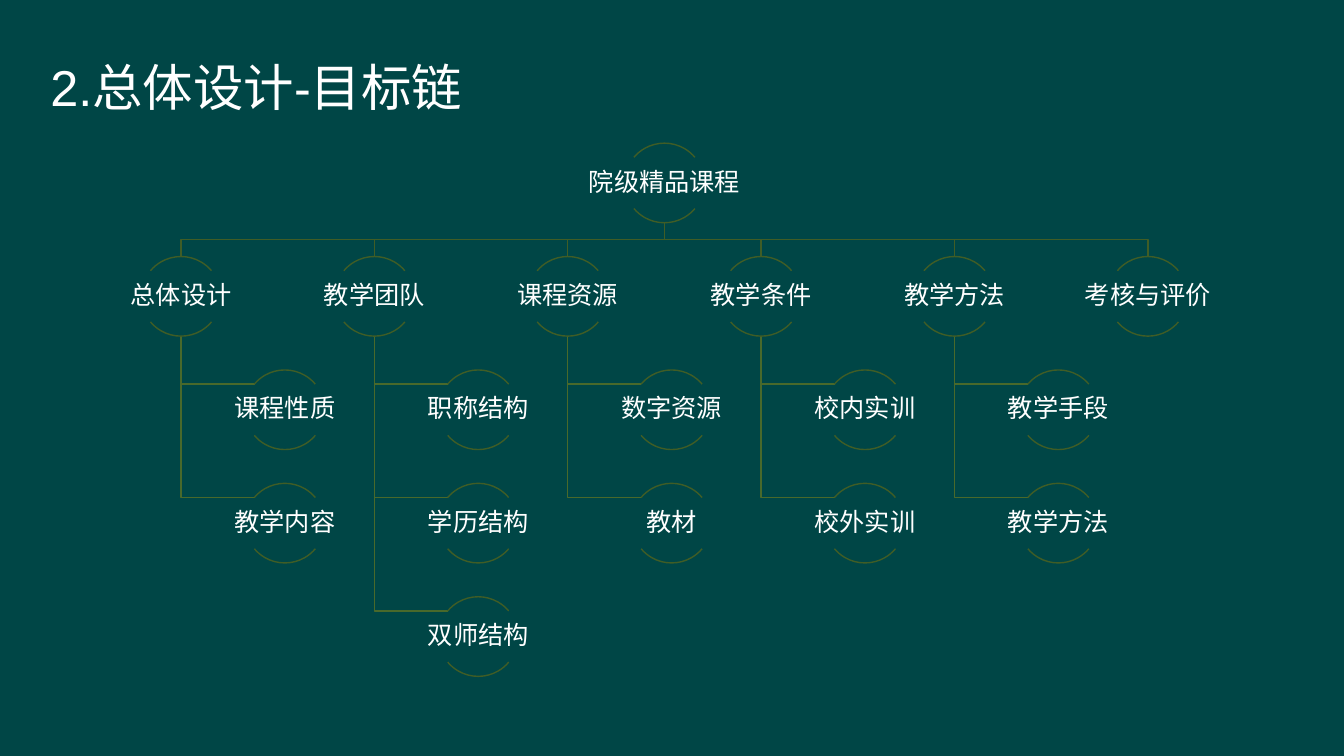
from pptx import Presentation
from pptx.dml.color import RGBColor
from pptx.enum.shapes import MSO_SHAPE
from pptx.enum.text import MSO_ANCHOR, PP_ALIGN
from pptx.util import Inches, Pt

BACKGROUND = RGBColor(0x00, 0x46, 0x46)
WHITE = RGBColor(0xFF, 0xFF, 0xFF)
BRANCH_LINE = RGBColor(0x40, 0x5D, 0x26)
LEAF_LINE = RGBColor(0x49, 0x69, 0x2B)

LATIN, CHINESE, LABEL = "Arial", "Noto Sans CJK SC", "Times New Roman"
TITLE = [("2.", LATIN), ("总体设计", CHINESE), ("-", LATIN), ("目标链", CHINESE)]
ROOT = "院级精品课程"
BRANCHES = [
    ("总体设计", ["课程性质", "教学内容"]),
    ("教学团队", ["职称结构", "学历结构", "双师结构"]),
    ("课程资源", ["数字资源", "教材"]),
    ("教学条件", ["校内实训", "校外实训"]),
    ("教学方法", ["教学手段", "教学方法"]),
    ("考核与评价", []),
]

CIRCLE = 0.79
LABEL_W, LABEL_H = 1.59, 0.51
LABEL_DROP = (CIRCLE - LABEL_H) / 2
LEAF_INDENT = 1.03
LEAF_LINK = 0.73
ROWS = 5
ARCS = [(132, 192), (24, 84)]  # upper and lower arc, in 100000ths of the angle unit


def style_line(shape, color):
    shape.shadow.inherit = False
    shape.fill.background()
    shape.line.color.rgb = color
    shape.line.width = Pt(1)


def add_title(s, left, top, width, height):
    title = s.shapes.title
    title.left, title.top = Inches(left), Inches(top)
    title.width, title.height = Inches(width), Inches(height)
    tf = title.text_frame
    tf.margin_left = tf.margin_top = tf.margin_right = tf.margin_bottom = 0
    tf.vertical_anchor = MSO_ANCHOR.TOP
    tf.word_wrap = True
    p = tf.paragraphs[0]
    p.alignment = PP_ALIGN.LEFT
    p.line_spacing = Pt(40.2)
    p.font.size = Pt(36)
    p.font.color.rgb = WHITE
    for text, font in TITLE:
        r = p.add_run()
        r.text = text
        r.font.name = font


def add_link(s, points, color):
    """Draw an open bent line through the points."""
    start, *bends = [(Inches(x), Inches(y)) for x, y in points]
    builder = s.shapes.build_freeform(*start)
    builder.add_line_segments(bends, close=False)
    style_line(builder.convert_to_shape(), color)


def add_node(s, center, top, text):
    """Draw a label between two arcs of one circle."""
    for angles in ARCS:
        arc = s.shapes.add_shape(MSO_SHAPE.ARC, Inches(center - CIRCLE / 2),
                                 Inches(top), Inches(CIRCLE), Inches(CIRCLE))
        arc.adjustments[0], arc.adjustments[1] = angles
        style_line(arc, BRANCH_LINE)
    box = s.shapes.add_textbox(Inches(center - LABEL_W / 2), Inches(top + LABEL_DROP),
                               Inches(LABEL_W), Inches(LABEL_H))
    tf = box.text_frame
    tf.margin_left = tf.margin_top = tf.margin_right = tf.margin_bottom = Inches(0.01)
    tf.vertical_anchor = MSO_ANCHOR.MIDDLE
    tf.word_wrap = True
    p = tf.paragraphs[0]
    p.text = text
    p.alignment = PP_ALIGN.CENTER
    p.line_spacing = 0.9
    p.font.name = LABEL
    p.font.size = Pt(18)
    p.font.color.rgb = WHITE


def add_goal_tree(s, left, top, width, height):
    col = (width - LABEL_W) / (len(BRANCHES) - 1)
    row = (height - CIRCLE) / (ROWS - 1)
    root_x, root_bottom = left + width / 2, top + CIRCLE
    branch_top = top + row
    bus_y = (root_bottom + branch_top) / 2

    nodes = [(root_x, top, ROOT)]
    for i, (branch, leaves) in enumerate(BRANCHES):
        x = left + LABEL_W / 2 + i * col
        add_link(s, [(root_x, root_bottom), (root_x, bus_y), (x, bus_y),
                     (x, branch_top)], BRANCH_LINE)
        nodes.append((x, branch_top, branch))
        for j, leaf in enumerate(leaves, start=1):
            leaf_top = branch_top + j * row
            link_y = leaf_top + LABEL_DROP
            add_link(s, [(x, branch_top + CIRCLE), (x, link_y),
                         (x + LEAF_LINK, link_y)], LEAF_LINE)
            nodes.append((x + LEAF_INDENT, leaf_top, leaf))
    for node in nodes:
        add_node(s, *node)


def main():
    prs = Presentation()
    prs.slide_width, prs.slide_height = Inches(13.33), Inches(7.5)
    s = prs.slides.add_slide(prs.slide_layouts[5])
    s.background.fill.solid()
    s.background.fill.fore_color.rgb = BACKGROUND
    add_title(s, 0.5, 0.6, 4.83, 1.31)
    add_goal_tree(s, 1, 1.42, 11.18, 5.29)
    prs.save("out.pptx")


if __name__ == "__main__":
    main()
